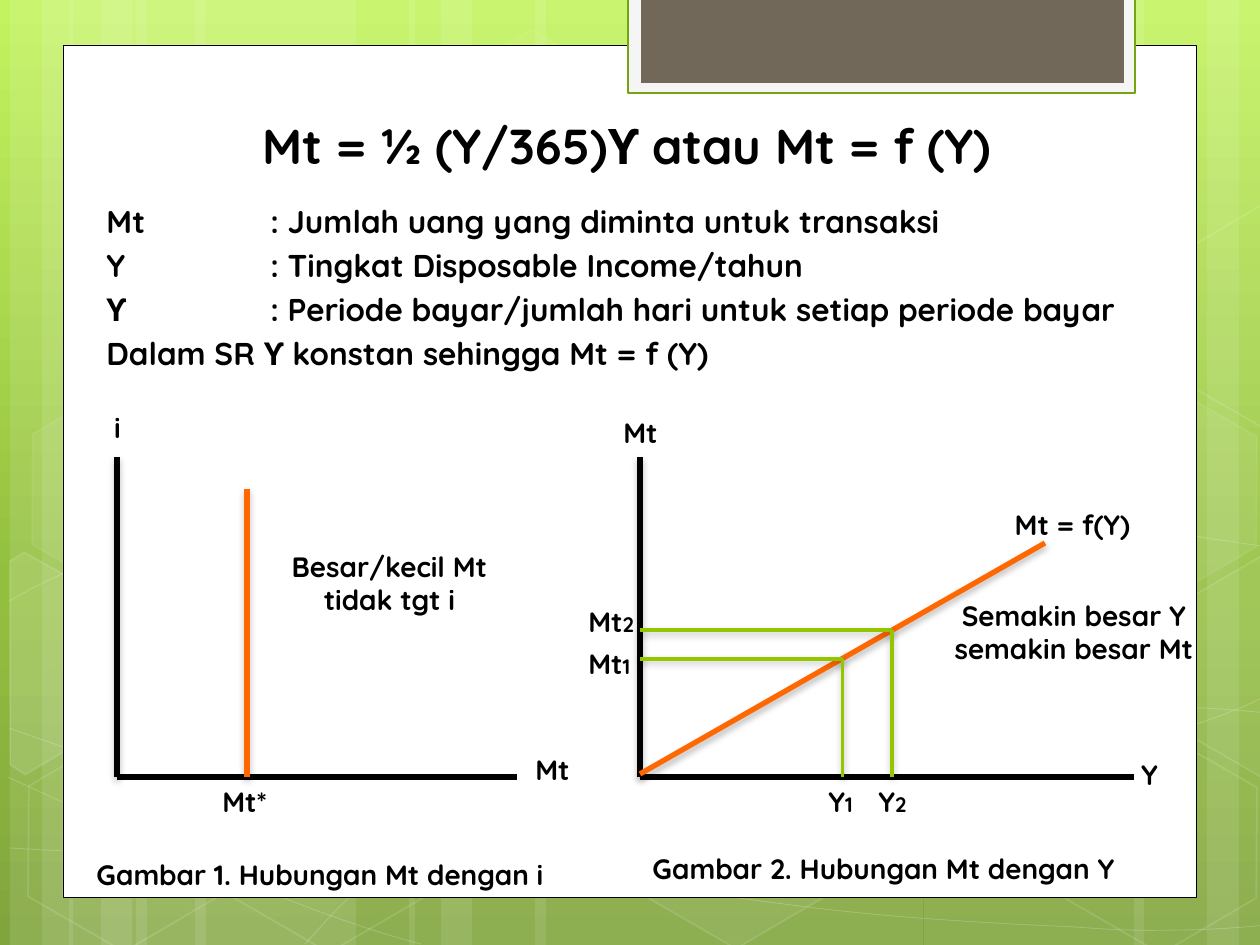
from copy import deepcopy
from math import cos, radians, sin

from lxml.etree import SubElement
from pptx import Presentation
from pptx.dml.color import RGBColor
from pptx.enum.shapes import MSO_CONNECTOR, MSO_SHAPE
from pptx.enum.text import PP_ALIGN
from pptx.oxml.ns import qn
from pptx.util import Emu, Inches, Pt

SCALE = Inches(1) / 126
FONT = "Quicksand"
BLACK, WHITE, ORANGE, GREEN = "000000", "FFFFFF", "FF6700", "94C600"
CENTER, LEFT = PP_ALIGN.CENTER, PP_ALIGN.LEFT
TILT = 30

SKY = [(0, "C3F35F"), (0.62, "93BF3F"), (1, "81A53E")]
STRIPES = [(136, 220), (10, 63), (42, 105), (195, 220), (69, 63), (101, 105),
           (924, 220), (1207, 63), (1134, 105), (535, 388), (409, 63), (441, 105)]
CURVES = [
    [(9, 848), (77, 852), (145, 855), (239, 854), (334, 853), (451, 851), (577, 838),
     (703, 825), (882, 801), (998, 777), (1113, 753), (1231, 717), (1269, 694)],
    [(9, 601), (45, 581), (82, 562), (152, 543), (224, 524), (326, 496), (437, 488),
     (549, 479), (685, 478), (824, 488), (963, 498), (1193, 537), (1269, 547)],
    [(8, 777), (160, 847), (311, 916), (421, 944)],
    [(9, 728), (48, 742), (88, 756), (161, 776), (234, 795), (344, 827), (450, 848),
     (554, 869), (687, 892), (791, 905), (896, 919), (1008, 924), (1075, 927),
     (1140, 932), (1158, 930), (1191, 930), (1223, 929), (1246, 927), (1269, 925)],
    [(305, 944), (328, 919), (350, 893), (381, 871), (411, 848), (454, 823), (489, 805),
     (524, 787), (546, 779), (592, 767), (638, 755), (722, 737), (766, 728),
     (811, 719), (818, 719), (857, 717), (896, 713), (958, 709), (1000, 708),
     (1045, 707), (1116, 708), (1116, 708), (1144, 708), (1173, 708), (1201, 708),
     (1223, 709), (1245, 711), (1256, 712), (1268, 713), (1264, 712), (1268, 713)],
]
HEXAGONS = [(421, 45, 4, 8), (626, 742, 6, 12), (14, 745, 0, 12), (18, 393, 7, 8),
            (219, 746, 0, 12), (949, 571, 10, 12), (1051, 747, 0, 12), (1051, 396, 7, 8)]
CUT_HEXAGONS = [
    ((45, 674), [(10, 561), (24, 552), (121, 607), (120, 718), (25, 774), (10, 765)], 10),
    ((1241, 655), [(1167, 611), (1261, 556), (1271, 562), (1271, 772), (1263, 777),
                   (1167, 722)], 4),
    ((1241, 304), [(1167, 261), (1261, 205), (1273, 212), (1271, 422), (1263, 427),
                   (1167, 372)], 0),
]
DEFINITIONS = [
    "Mt\t: Jumlah uang yang diminta untuk transaksi",
    "Y\t\t: Tingkat Disposable Income/tahun",
    "ϒ \t\t: Periode bayar/jumlah hari untuk setiap periode bayar",
    "Dalam SR ϒ konstan sehingga Mt = f (Y)",
]
AXES_AND_CURVES = [
    (117, 457, 117, 777, BLACK, 3, True), (117, 777, 517, 777, BLACK, 3, False),
    (247, 777, 247, 489, ORANGE, 3, True),
    (640, 457, 640, 777, BLACK, 3, True), (640, 777, 1134, 777, BLACK, 3, False),
    (640, 774, 1045, 543, ORANGE, 3, True),
]
READINGS = [("1", 843, 659, 816, 640), ("2", 892, 630, 866, 598)]


def px(length):
    """Turn px into EMU."""
    return Emu(round(length * SCALE))


def color(code):
    """Turn a hex string into a colour."""
    return RGBColor.from_string(code)


def paint(shape, fill=None, fill_alpha=100, line=None, width=1, line_alpha=100):
    """Set fill, outline and their opacity in percent, without shadow."""
    shape.shadow.inherit = False
    for part, code, alpha, where in ((shape.fill, fill, fill_alpha, "a:solidFill"),
                                     (shape.line.fill, line, line_alpha, "a:ln/a:solidFill")):
        if not code or not alpha:
            part.background()
            continue
        part.solid()
        part.fore_color.rgb = color(code)
        if alpha < 100:
            tint = shape.element.xpath(f"./p:spPr/{where}/a:srgbClr")[0]
            SubElement(tint, qn("a:alpha"), val=str(alpha * 1000))
    if line:
        shape.line.width = Pt(width)


def add_preset(slide, kind, box, **style):
    """Add a painted preset shape."""
    shape = slide.shapes.add_shape(kind, *map(px, box))
    paint(shape, **style)
    return shape


def add_outline(slide, points, close, **style):
    """Add a painted freeform through the points."""
    builder = slide.shapes.build_freeform(*points[0], scale=SCALE)
    builder.add_line_segments(points[1:], close=close)
    shape = builder.convert_to_shape()
    paint(shape, **style)
    return shape


def add_curve(slide, nodes, **style):
    """Add an open chain of cubic curves."""
    outline = add_outline(slide, nodes, False, **style).element.xpath(".//a:path")[0]
    segments = list(outline)[1:]
    for start in range(0, len(segments), 3):
        bend = SubElement(outline, qn("a:cubicBezTo"))
        for segment in segments[start:start + 3]:
            bend.append(segment[0])
            outline.remove(segment)


def turn_back(point, pivot):
    """Undo the tilt of a point about its pivot."""
    dx, dy = point[0] - pivot[0], point[1] - pivot[1]
    c, s = cos(radians(TILT)), sin(radians(TILT))
    return pivot[0] + c * dx + s * dy, pivot[1] - s * dx + c * dy


def add_line(slide, x1, y1, x2, y2, code, width, shaded=True):
    """Add a straight line, with a soft shadow if shaded."""
    line = slide.shapes.add_connector(MSO_CONNECTOR.STRAIGHT, *map(px, (x1, y1, x2, y2)))
    line.line.color.rgb = color(code)
    line.line.width = Pt(width)
    effects = SubElement(line.element.spPr, qn("a:effectLst"))
    if shaded:
        shadow = SubElement(effects, qn("a:outerShdw"), blurRad=str(Pt(4)), dist=str(Pt(2)),
                            dir="5400000", rotWithShape="0")
        tint = SubElement(shadow, qn("a:srgbClr"), val=BLACK)
        SubElement(tint, qn("a:alpha"), val="28000")


def write(paragraph, text, size=16, align=LEFT, before=0):
    """Append a bold run to the paragraph."""
    paragraph.alignment = align
    paragraph.space_before = Pt(before)
    run = paragraph.add_run()
    run.text = text
    run.font.name = FONT
    run.font.size = Pt(size)
    run.font.bold = True
    run.font.color.rgb = color(BLACK)


def add_label(slide, text, x, y, width, height=47, align=CENTER, index="", wrap=True):
    """Add a label with an optional small index."""
    label = slide.shapes.add_textbox(*map(px, (x, y, width, height)))
    label.text_frame.word_wrap = wrap
    paragraph = label.text_frame.paragraphs[0]
    write(paragraph, text, align=align)
    if index:
        write(paragraph, index, size=12, align=align)


def add_backdrop(slide):
    """Draw the gradient, stripes, curves, hexagons and the white panel."""
    sky = slide.background.fill
    sky.gradient()
    sky.gradient_angle = 270
    stops = slide.element.xpath(".//a:gsLst")[0]
    stops.append(deepcopy(stops[0]))
    for stop, (position, code) in zip(sky.gradient_stops, SKY):
        stop.position = position
        stop.color.rgb = color(code)
    for x, width in STRIPES:
        add_preset(slide, MSO_SHAPE.RECTANGLE, (x, 0, width, 945), fill=WHITE, fill_alpha=10)
    for nodes in CURVES:
        add_curve(slide, nodes, line=WHITE, width=0.5, line_alpha=20)
    for x, y, fill_alpha, line_alpha in HEXAGONS:
        hexagon = add_preset(slide, MSO_SHAPE.HEXAGON, (x, y, 220, 192), fill=WHITE,
                             fill_alpha=fill_alpha, line=WHITE, line_alpha=line_alpha)
        hexagon.adjustments[0] = 0.285
        hexagon.rotation = TILT
    for pivot, corners, alpha in CUT_HEXAGONS:
        upright = [turn_back(corner, pivot) for corner in corners]
        add_outline(slide, upright, True, fill=WHITE, fill_alpha=alpha, line=WHITE,
                    line_alpha=12).rotation = TILT
    for box, style in (((63, 45, 1134, 853), dict(fill=WHITE, line=BLACK, width=0.5)),
                       ((628, -3, 507, 96), dict(fill="F5F5F5", line="74A510", width=1.25)),
                       ((641, -3, 483, 86), dict(fill="71685A"))):
        add_preset(slide, MSO_SHAPE.RECTANGLE, box, **style)


def add_formula(slide):
    """Write the formula and the meaning of its symbols."""
    frame = slide.shapes.add_textbox(*map(px, (84, 109, 1076, 301))).text_frame
    frame.word_wrap = True
    write(frame.paragraphs[0], "Mt = ½ (Y/365)ϒ atau Mt = f (Y)", size=28, align=CENTER)
    for number, definition in enumerate(DEFINITIONS):
        write(frame.add_paragraph(), definition, size=18, before=3.6 if number else 16)
    for paragraph in frame.paragraphs:
        properties = paragraph._p.get_or_add_pPr()
        properties.set("marL", str(Inches(0.38)))
        properties.set("indent", str(Inches(-0.3)))
        properties.set("defTabSz", str(Inches(1)))


def add_graphs(slide):
    """Draw both graphs with their labels and captions."""
    y_axis_name = add_preset(slide, MSO_SHAPE.RECTANGLE, (1113, 751, 73, 47),
                             line=WHITE, width=0.75)
    write(y_axis_name.text_frame.paragraphs[0], "Y", align=CENTER)
    for line in AXES_AND_CURVES:
        add_line(slide, *line)
    for index, x, y, label_x, label_y in READINGS:
        add_line(slide, 640, y, x, y, GREEN, 1.75)
        add_line(slide, x, y, x, 777, GREEN, 1.75)
        add_label(slide, "Mt", 576, label_y, 71, align=LEFT, index=index, wrap=False)
        add_label(slide, "Y", label_x, 778, 55, align=LEFT, index=index, wrap=False)
    add_label(slide, "i", 86, 404, 63)
    add_label(slide, "Mt", 516, 746, 73)
    add_label(slide, "Mt*", 210, 778, 73, align=LEFT)
    add_label(slide, "Besar/kecil Mt tidak tgt i", 263, 543, 253, 81)
    add_label(slide, "Gambar 1. Hubungan Mt dengan i", 84, 851, 536, align=LEFT)
    add_label(slide, "Mt", 604, 409, 73)
    add_label(slide, "Mt = f(Y)", 983, 501, 179)
    add_label(slide, "Semakin besar Y semakin besar Mt", 935, 592, 278, 81)
    add_label(slide, "Gambar 2. Hubungan Mt dengan Y", 640, 845, 525, align=LEFT)


def main():
    """Build the slide on transaction money demand."""
    deck = Presentation()
    deck.slide_width, deck.slide_height = px(1260), px(945)
    slide = deck.slides.add_slide(deck.slide_layouts[6])
    add_backdrop(slide)
    add_formula(slide)
    add_graphs(slide)
    deck.save("out.pptx")


if __name__ == "__main__":
    main()
